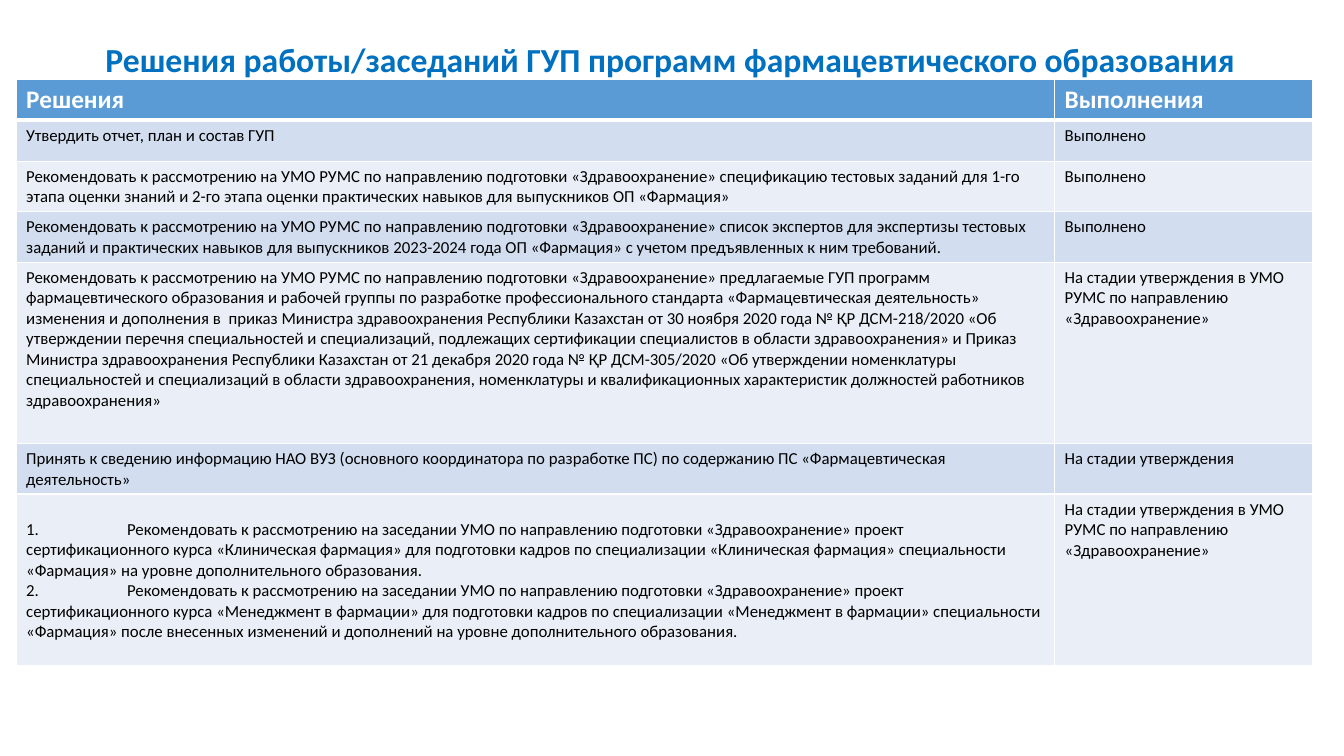
"""Build a slide with a table of working group decisions and their status."""
from lxml import etree
from pptx import Presentation
from pptx.dml.color import RGBColor
from pptx.enum.text import PP_ALIGN
from pptx.oxml.ns import qn
from pptx.util import Inches, Pt

CENTER = PP_ALIGN.CENTER
HEX = {"title": "0070C0", "head": "5B9BD5", "odd": "D2DEEF", "even": "EAEFF7",
       "line": "FFFFFF", "light": "FFFFFF", "dark": "000000"}

TITLE = "Решения работы/заседаний ГУП программ фармацевтического образования "
DONE = "Выполнено"
STAGE = "На стадии утверждения"
COUNCIL = STAGE + " в УМО РУМС по направлению «Здравоохранение»"
ROWS = [
    (0.4, "Решения", "Выполнения"),
    (0.41, "Утвердить отчет, план и состав ГУП", DONE),
    (0.5, "Рекомендовать к рассмотрению на УМО РУМС по направлению подготовки "
     "«Здравоохранение» спецификацию тестовых заданий для 1-го этапа оценки знаний "
     "и 2-го этапа оценки практических навыков для выпускников ОП «Фармация»", DONE),
    (0.5, "Рекомендовать к рассмотрению на УМО РУМС по направлению подготовки "
     "«Здравоохранение» список экспертов для экспертизы тестовых заданий и "
     "практических навыков для выпускников 2023-2024 года ОП «Фармация» с учетом "
     "предъявленных к ним требований.", DONE),
    (1.8, "Рекомендовать к рассмотрению на УМО РУМС по направлению подготовки "
     "«Здравоохранение» предлагаемые ГУП программ фармацевтического образования и "
     "рабочей группы по разработке профессионального стандарта «Фармацевтическая "
     "деятельность» изменения и дополнения в  приказ Министра здравоохранения "
     "Республики Казахстан от 30 ноября 2020 года № ҚР ДСМ-218/2020 «Об утверждении "
     "перечня специальностей и специализаций, подлежащих сертификации специалистов "
     "в области здравоохранения» и Приказ Министра здравоохранения Республики "
     "Казахстан от 21 декабря 2020 года № ҚР ДСМ-305/2020 «Об утверждении "
     "номенклатуры специальностей и специализаций в области здравоохранения, "
     "номенклатуры и квалификационных характеристик должностей работников "
     "здравоохранения»", COUNCIL),
    (0.5, "Принять к сведению информацию НАО ВУЗ (основного координатора по "
     "разработке ПС) по содержанию ПС «Фармацевтическая деятельность»", STAGE),
    (1.7, "1.\tРекомендовать к рассмотрению на заседании УМО по направлению "
     "подготовки «Здравоохранение» проект сертификационного курса «Клиническая "
     "фармация» для подготовки кадров по специализации «Клиническая фармация» "
     "специальности «Фармация» на уровне дополнительного образования.\n"
     "2.\tРекомендовать к рассмотрению на заседании УМО по направлению "
     "подготовки «Здравоохранение» проект сертификационного курса «Менеджмент в "
     "фармации» для подготовки кадров по специализации «Менеджмент в фармации» "
     "специальности «Фармация» после внесенных изменений и дополнений на уровне "
     "дополнительного образования.", COUNCIL),
]
COLS = [10.3, 2.56]
LEFT, TOP = 0.16, 0.79
LIST_TOP, LIST_TAB = 0.25, 1
FORMATS = {
    "title": ({"name": "Calibri", "size": Pt(24), "bold": True}, "title"),
    "head": ({"name": "Calibri", "size": Pt(18), "bold": True}, "light"),
    "body": ({"name": "Calibri", "size": Pt(12), "bold": False}, "dark"),
}


def color(name):
    return RGBColor.from_string(HEX[name])


def style(frame, kind):
    values, tint = FORMATS[kind]
    for para in frame.paragraphs:
        for run in para.runs:
            for key, value in values.items():
                setattr(run.font, key, value)
            run.font.color.rgb = color(tint)


def border(cell, side, width):
    props = cell._tc.get_or_add_tcPr()
    line = etree.SubElement(props, qn("a:ln" + side), w=str(Pt(width)))
    fill = etree.SubElement(line, qn("a:solidFill"))
    etree.SubElement(fill, qn("a:srgbClr"), val=HEX["line"])


def set_list(cell):
    cell.margin_top = Inches(LIST_TOP)
    for para in cell.text_frame.paragraphs:
        tabs = etree.SubElement(para._p.get_or_add_pPr(), qn("a:tabLst"))
        etree.SubElement(tabs, qn("a:tab"), pos=str(Inches(LIST_TAB)), algn="l")


def add_title(slide):
    box = slide.shapes.add_textbox(Inches(LEFT), Inches(0.34), Inches(13.05), Inches(0.91))
    frame = box.text_frame
    frame.word_wrap = True
    frame.text = TITLE
    frame.paragraphs[0].alignment = CENTER
    style(frame, "title")


def add_grid(slide):
    high = sum(row[0] for row in ROWS)
    grid = slide.shapes.add_table(len(ROWS), len(COLS), Inches(LEFT), Inches(TOP),
                                  Inches(sum(COLS)), Inches(high)).table
    for col, width in zip(grid.columns, COLS):
        col.width = Inches(width)
    for i, (height, *texts) in enumerate(ROWS):
        grid.rows[i].height = Inches(height)
        band = "head" if i == 0 else "odd" if i % 2 else "even"
        for j, text in enumerate(texts):
            cell = grid.cell(i, j)
            cell.text = text
            style(cell.text_frame, "body" if i else "head")
            for side in "LRTB":
                heavy = (i == 0 and side == "B") or (i == 1 and side == "T")
                border(cell, side, 3 if heavy else 1)
            cell.fill.solid()
            cell.fill.fore_color.rgb = color(band)
            if "\n" in text:
                set_list(cell)


def main():
    deck = Presentation()
    deck.slide_width, deck.slide_height = Inches(13.33), Inches(7.5)
    slide = deck.slides.add_slide(deck.slide_layouts[6])
    add_title(slide)
    add_grid(slide)
    deck.save("out.pptx")


if __name__ == "__main__":
    main()
